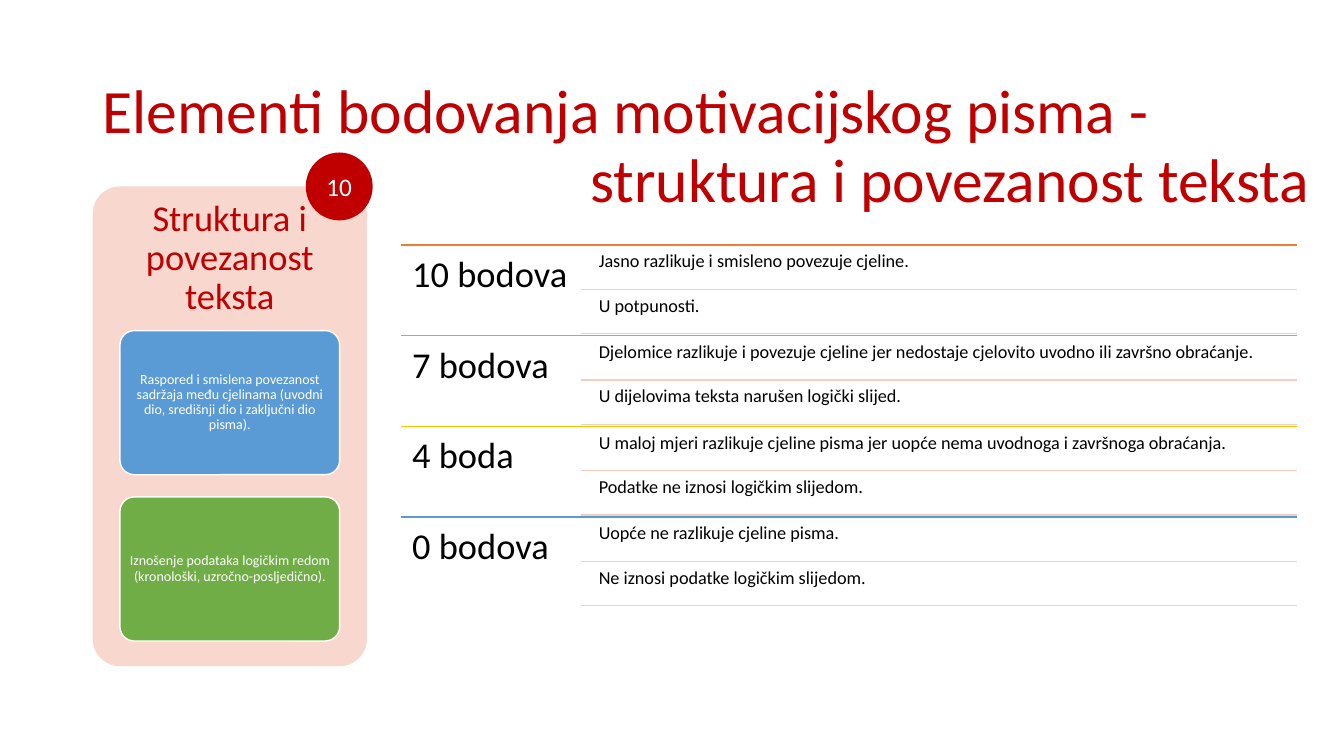
from dataclasses import dataclass

from lxml import etree
from pptx import Presentation
from pptx.dml.color import RGBColor
from pptx.enum.shapes import MSO_CONNECTOR, MSO_SHAPE
from pptx.enum.text import MSO_ANCHOR, PP_ALIGN
from pptx.oxml.ns import qn
from pptx.util import Inches, Pt

ROUNDED = MSO_SHAPE.ROUNDED_RECTANGLE
OVAL = MSO_SHAPE.OVAL
STRAIGHT = MSO_CONNECTOR.STRAIGHT
TOP, MIDDLE = MSO_ANCHOR.TOP, MSO_ANCHOR.MIDDLE
LEFT, CENTER = PP_ALIGN.LEFT, PP_ALIGN.CENTER

COLORS = {
    "red": "C00000", "black": "000000", "white": "FFFFFF",
    "orange": "ED7D31", "gray": "A5A5A5", "gold": "FFC000",
    "blue": "5B9BD5", "green": "70AD47", "pink": "F6CCBE", "peach": "F8D7CE",
}

SLIDE_WIDTH, SLIDE_HEIGHT = Inches(13.33), Inches(7.5)
COLUMN = SLIDE_WIDTH / 40
ROW = SLIDE_HEIGHT / 22.5


@dataclass(frozen=True)
class Area:
    col: float
    row: float
    cols: float
    rows: float

    def box(self) -> tuple[int, int, int, int]:
        return (round(self.col * COLUMN), round(self.row * ROW),
                round(self.cols * COLUMN), round(self.rows * ROW))


@dataclass(frozen=True)
class TextStyle:
    size: int
    color: str
    anchor: int = MIDDLE
    align: int = LEFT
    inset_x: float = 0.1
    inset_y: float = 0.05
    spacing: float = 0.9


@dataclass(frozen=True)
class Level:
    points: str
    color: str
    details: tuple[str, str]


@dataclass(frozen=True)
class Criterion:
    text: str
    color: str


TITLE = TextStyle(44, "red")
POINTS = TextStyle(26, "black", TOP, LEFT, 0.11, 0.11)
DETAIL = TextStyle(13, "black", TOP, LEFT, 0.05, 0.05)
HEADING = TextStyle(26, "red", MIDDLE, CENTER, 0.11, 0.11)
CRITERION = TextStyle(10, "white", MIDDLE, CENTER, 0.03, 0.02)
BADGE = TextStyle(18, "white", MIDDLE, CENTER, 0, 0, 1.0)

LEVELS = (
    Level("10 bodova", "orange", (
        "Jasno razlikuje i smisleno povezuje cjeline.",
        "U potpunosti.")),
    Level("7 bodova", "gray", (
        "Djelomice razlikuje i povezuje cjeline jer nedostaje cjelovito uvodno ili završno obraćanje.",
        "U dijelovima teksta narušen logički slijed.")),
    Level("4 boda", "gold", (
        "U maloj mjeri razlikuje cjeline pisma jer uopće nema uvodnoga i završnoga obraćanja.",
        "Podatke ne iznosi logičkim slijedom.")),
    Level("0 bodova", "blue", (
        "Uopće ne razlikuje cjeline pisma.",
        "Ne iznosi podatke logičkim slijedom.")),
)
CRITERIA = (
    Criterion("Raspored i smislena povezanost sadržaja među cjelinama "
              "(uvodni dio, središnji dio i zaključni dio pisma).", "blue"),
    Criterion("Iznošenje podataka logičkim redom "
              "(kronološki, uzročno-posljedično).", "green"),
)

LEVELS_COL, DETAIL_RULE_COL, DETAIL_COL, LEVELS_END = 11.94, 17.28, 17.67, 38.61
LEVELS_ROW, LEVEL_ROWS, DETAIL_ROWS, DETAIL_GAP = 7.29, 2.7, 1.32, 0.06
CARDS_ROW, CARD_ROWS, CARD_STEP = 9.84, 4.29, 4.95


def rgb(name: str) -> RGBColor:
    return RGBColor.from_string(COLORS[name])


def write(frame, text: str, style: TextStyle) -> None:
    paragraph = frame.paragraphs[0]
    run = paragraph.add_run()
    formats = {
        frame: {
            "word_wrap": True, "vertical_anchor": style.anchor,
            "margin_left": Inches(style.inset_x), "margin_right": Inches(style.inset_x),
            "margin_top": Inches(style.inset_y), "margin_bottom": Inches(style.inset_y),
        },
        paragraph: {"alignment": style.align, "line_spacing": style.spacing},
        run: {"text": text},
        run.font: {"name": "Calibri", "size": Pt(style.size)},
    }
    for target, values in formats.items():
        for attribute, value in values.items():
            setattr(target, attribute, value)
    run.font.color.rgb = rgb(style.color)


def add_text(slide, area: Area, text: str, style: TextStyle) -> None:
    write(slide.shapes.add_textbox(*area.box()).text_frame, text, style)


def add_block(slide, kind: int, area: Area, fill: str, outline: str = ""):
    block = slide.shapes.add_shape(kind, *area.box())
    block.shadow.inherit = False
    block.fill.solid()
    block.fill.fore_color.rgb = rgb(fill)
    if kind == ROUNDED:
        block.adjustments[0] = 0.1
    if outline:
        block.line.color.rgb = rgb(outline)
        block.line.width = Pt(1)
    else:
        block.line.fill.background()
    return block


def add_rule(slide, col: float, row: float, color: str) -> None:
    left, y, width, _ = Area(col, row, LEVELS_END - col, 0).box()
    rule = slide.shapes.add_connector(STRAIGHT, left, y, left + width, y)
    rule.line.color.rgb = rgb(color)
    rule.line.width = Pt(1)
    etree.SubElement(rule._element.spPr, qn("a:effectLst"))


def add_level(slide, row: float, level: Level) -> None:
    add_rule(slide, LEVELS_COL, row, level.color)
    add_text(slide, Area(LEVELS_COL, row, DETAIL_RULE_COL - LEVELS_COL, LEVEL_ROWS),
             level.points, POINTS)
    for index, detail in enumerate(level.details):
        detail_row = row + index * DETAIL_ROWS
        add_text(slide, Area(DETAIL_COL, detail_row + DETAIL_GAP,
                             LEVELS_END - DETAIL_COL, DETAIL_ROWS - DETAIL_GAP),
                 detail, DETAIL)
        add_rule(slide, DETAIL_RULE_COL, detail_row + DETAIL_ROWS, "pink")


def add_criteria_panel(slide) -> None:
    add_block(slide, ROUNDED, Area(2.76, 5.55, 8.16, 14.28), "peach")
    add_text(slide, Area(2.76, 5.55, 8.16, 4.29), "Struktura i povezanost teksta", HEADING)
    for index, criterion in enumerate(CRITERIA):
        area = Area(3.57, CARDS_ROW + index * CARD_STEP, 6.54, CARD_ROWS)
        card = add_block(slide, ROUNDED, area, criterion.color, "white")
        write(card.text_frame, criterion.text, CRITERION)
    badge = add_block(slide, OVAL, Area(9.12, 4.56, 1.95, 1.98), "red", "red")
    write(badge.text_frame, "10", BADGE)


def main() -> None:
    deck = Presentation()
    deck.slide_width, deck.slide_height = SLIDE_WIDTH, SLIDE_HEIGHT
    slide = deck.slides.add_slide(deck.slide_layouts[6])
    add_text(slide, Area(2.76, 1.2, 34.5, 4.35),
             "Elementi bodovanja motivacijskog pisma -", TITLE)
    for index, level in enumerate(LEVELS):
        add_level(slide, LEVELS_ROW + index * LEVEL_ROWS, level)
    add_criteria_panel(slide)
    add_text(slide, Area(17.28, 4.17, 22.47, 2.55), "struktura i povezanost teksta", TITLE)
    deck.save("out.pptx")


if __name__ == "__main__":
    main()
